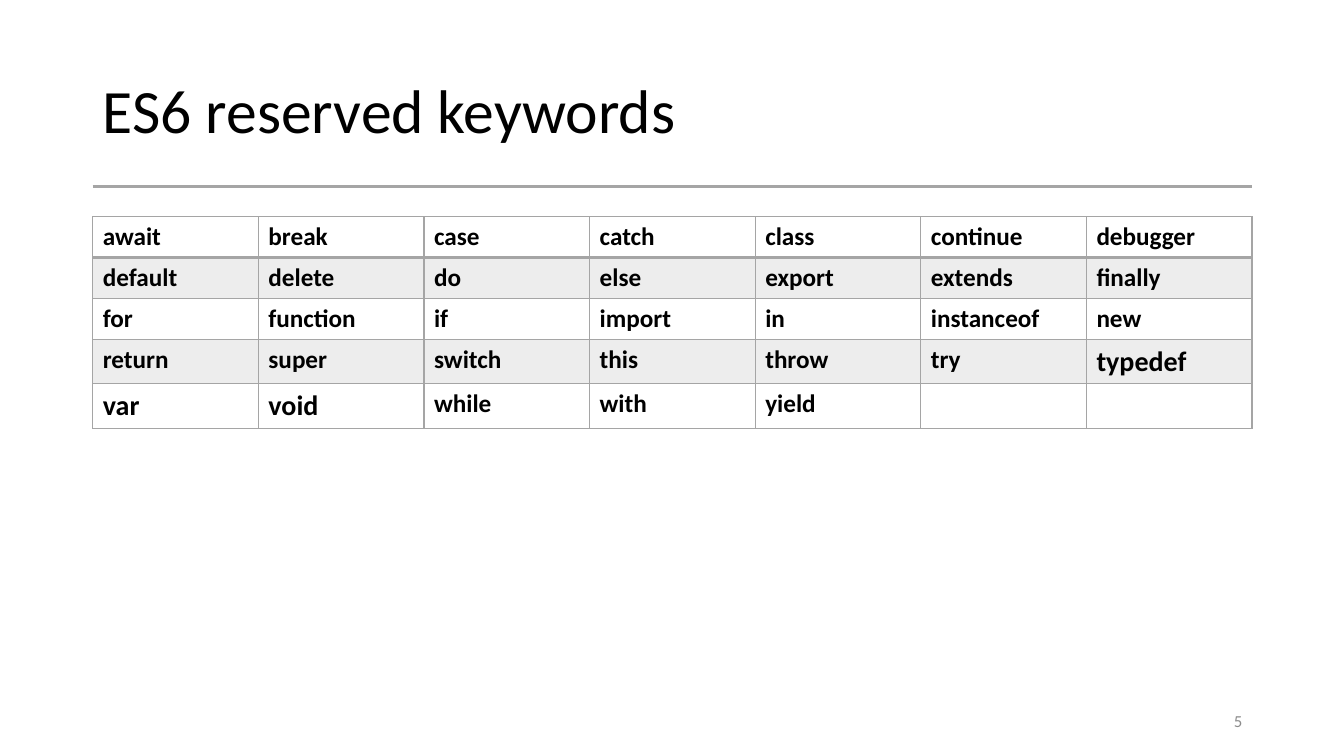
"""Build the slide listing the ES6 reserved keywords in a banded table."""
from dataclasses import dataclass

from lxml.etree import SubElement
from pptx import Presentation
from pptx.dml.color import RGBColor
from pptx.enum.shapes import MSO_CONNECTOR
from pptx.enum.text import MSO_ANCHOR, PP_ALIGN
from pptx.oxml.ns import qn
from pptx.util import Inches, Pt

TITLE = "ES6 reserved keywords"
PAGE_NUMBER = "5"
KEYWORDS = [
    ["await", "break", "case", "catch", "class", "continue", "debugger"],
    ["default", "delete", "do", "else", "export", "extends", "finally"],
    ["for", "function", "if", "import", "in", "instanceof", "new"],
    ["return", "super", "switch", "this", "throw", "try", "typedef"],
    ["var", "void", "while", "with", "yield", "", ""],
]
LARGER_KEYWORDS = {"typedef", "var", "void"}
ROW_HEIGHTS = [0.36, 0.36, 0.36, 0.38, 0.38]
LEFT, WIDTH = 0.92, 11.5


@dataclass(frozen=True)
class Theme:
    font: str = "Calibri"
    ink: str = "000000"
    grey: str = "A5A5A5"
    page_ink: str = "8C8C8C"
    band_opacity: int = 20
    title_size: int = 44
    keyword_size: int = 18
    larger_size: int = 20
    page_size: int = 12
    rule_width: float = 1.5
    grid_width: int = 1
    header_width: int = 2


THEME = Theme()


def add_run(paragraph, text, size, color, bold=False):
    run = paragraph.add_run()
    run.text = text
    run.font.name = THEME.font
    run.font.size = Pt(size)
    run.font.bold = bold
    run.font.color.rgb = RGBColor.from_string(color)


def set_border(cell, side, width):
    border = SubElement(cell._tc.get_or_add_tcPr(), qn(f"a:ln{side}"), w=str(Pt(width)))
    SubElement(SubElement(border, qn("a:solidFill")), qn("a:srgbClr"), val=THEME.grey)


def shade(cell, banded):
    if not banded:
        cell.fill.background()
        return
    cell.fill.solid()
    cell.fill.fore_color.rgb = RGBColor.from_string(THEME.grey)
    color = cell._tc.tcPr.find(f"{qn('a:solidFill')}/{qn('a:srgbClr')}")
    SubElement(color, qn("a:alpha"), val=str(THEME.band_opacity * 1000))


def add_title(slide):
    title = slide.shapes.title
    title.left, title.top = Inches(LEFT), Inches(0.4)
    title.width, title.height = Inches(WIDTH), Inches(1.45)
    title.text_frame.vertical_anchor = MSO_ANCHOR.MIDDLE
    heading = title.text_frame.paragraphs[0]
    heading.alignment = PP_ALIGN.LEFT
    heading.line_spacing = 0.9
    add_run(heading, TITLE, THEME.title_size, THEME.ink)


def add_rule(slide):
    rule = slide.shapes.add_connector(
        MSO_CONNECTOR.STRAIGHT, Inches(LEFT), Inches(1.85), Inches(LEFT + WIDTH), Inches(1.85))
    rule.line.color.rgb = RGBColor.from_string(THEME.grey)
    rule.line.width = Pt(THEME.rule_width)
    SubElement(rule._element.spPr, qn("a:effectLst"))


def add_keywords(slide):
    frame = slide.shapes.add_table(
        len(KEYWORDS), len(KEYWORDS[0]), Inches(LEFT), Inches(2.15), Inches(WIDTH), Inches(2.07))
    table = frame.table
    table.first_row = table.horz_banding = False
    for row_index, (keywords, height) in enumerate(zip(KEYWORDS, ROW_HEIGHTS)):
        table.rows[row_index].height = Inches(height)
        top = THEME.header_width if row_index == 1 else THEME.grid_width
        bottom = THEME.header_width if row_index == 0 else THEME.grid_width
        borders = {"L": THEME.grid_width, "R": THEME.grid_width, "T": top, "B": bottom}
        for column_index, keyword in enumerate(keywords):
            cell = table.cell(row_index, column_index)
            for side, width in borders.items():
                set_border(cell, side, width)
            shade(cell, row_index % 2 == 1)
            if keyword:
                size = THEME.larger_size if keyword in LARGER_KEYWORDS else THEME.keyword_size
                add_run(cell.text_frame.paragraphs[0], keyword, size, THEME.ink, bold=True)


def add_page_number(slide):
    page = slide.shapes.add_textbox(Inches(9.42), Inches(6.95), Inches(3), Inches(0.4))
    page.text_frame.word_wrap = True
    page.text_frame.vertical_anchor = MSO_ANCHOR.MIDDLE
    number = page.text_frame.paragraphs[0]
    number.alignment = PP_ALIGN.RIGHT
    add_run(number, PAGE_NUMBER, THEME.page_size, THEME.page_ink)


def main():
    deck = Presentation()
    deck.slide_width, deck.slide_height = Inches(13.33), Inches(7.5)
    slide = deck.slides.add_slide(deck.slide_layouts[5])
    add_rule(slide)
    add_title(slide)
    add_keywords(slide)
    add_page_number(slide)
    deck.save("out.pptx")


if __name__ == "__main__":
    main()
